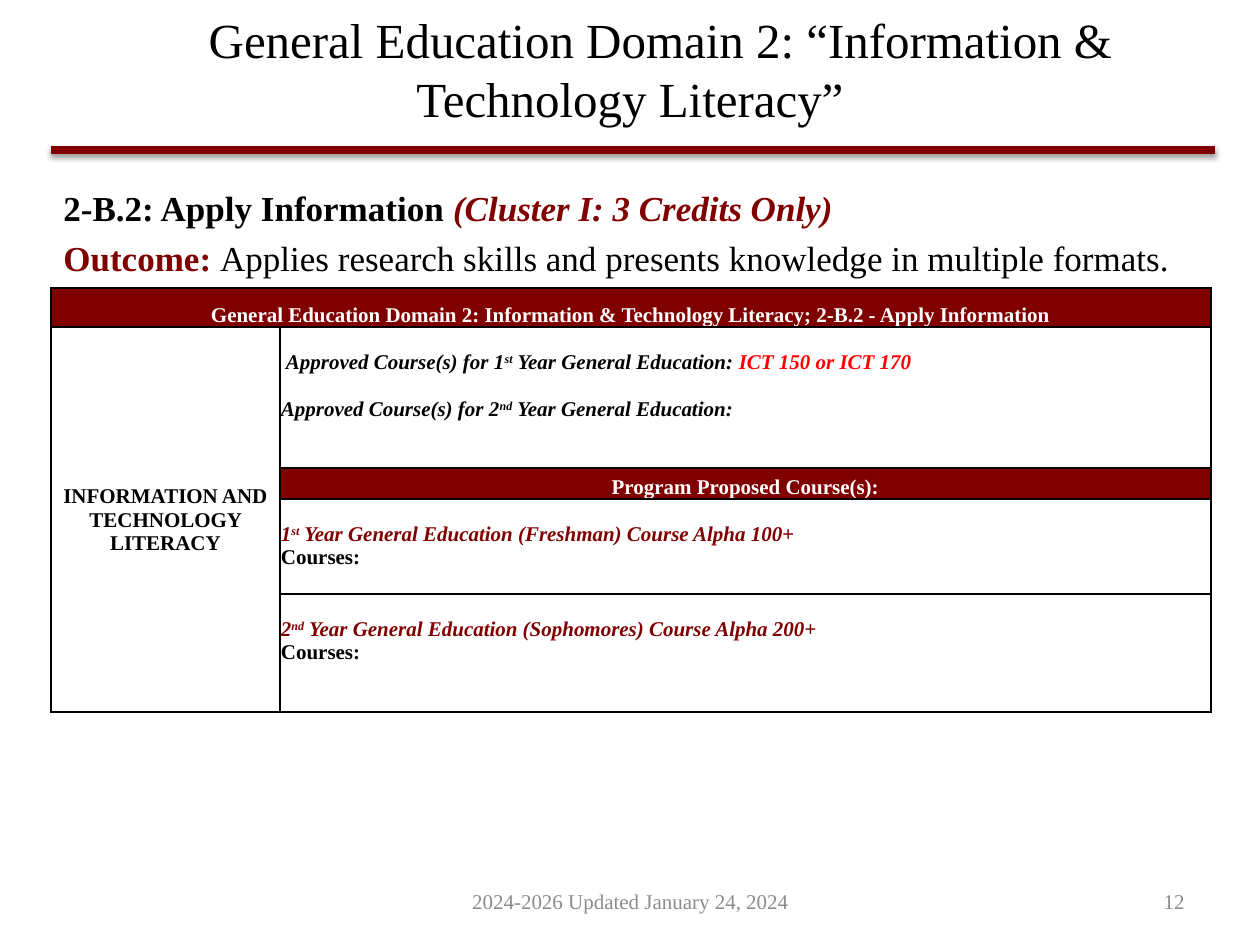
from lxml.etree import SubElement
from pptx import Presentation
from pptx.dml.color import RGBColor
from pptx.enum.shapes import MSO_CONNECTOR
from pptx.enum.text import MSO_ANCHOR, PP_ALIGN
from pptx.oxml.ns import qn
from pptx.util import Emu, Pt

SCALE = 914400 / 126
FONT = "Times New Roman"
MAROON, BLACK, WHITE, GREY, RED = "800000", "000000", "FFFFFF", "8C8C8C", "FF0000"
LABEL = {"bold": True}
NOTE = {"bold": True, "italic": True}


def px(length):
    return Emu(round(length * SCALE))


def color(value):
    return RGBColor.from_string(value)


def apply(target, values):
    for name, value in values.items():
        setattr(target, name, value)


def add_spans(para, spans, size):
    for text, ink, style in spans:
        span = para.add_run()
        span.text = text
        values = dict(style)
        raised = values.pop("raised", False)
        apply(span.font, {"name": FONT, "size": Pt(size), **values})
        span.font.color.rgb = color(ink)
        if raised:
            span.font._element.set("baseline", "30000")


def fill_text(frame, paras, size, align=PP_ALIGN.LEFT, gap=0):
    for index, spans in enumerate(paras):
        para = frame.paragraphs[0] if index == 0 else frame.add_paragraph()
        apply(para, {"alignment": align, "space_before": Pt(gap if index else 0)})
        add_spans(para, spans, size)


def indent(para, name, length):
    para._p.get_or_add_pPr().set(name, str(px(length)))


def add_text(page, box, paras, size, align=PP_ALIGN.LEFT, anchor=MSO_ANCHOR.MIDDLE, gap=0):
    frame = page.shapes.add_textbox(*map(px, box)).text_frame
    apply(frame, {"word_wrap": True, "vertical_anchor": anchor})
    fill_text(frame, paras, size, align, gap)
    return frame


def add_title(page, box):
    title = "General Education Domain 2: “Information & Technology Literacy”"
    frame = add_text(page, box, [[(title, BLACK, {})]], 28, PP_ALIGN.CENTER)
    indent(frame.paragraphs[0], "indent", 61)


def add_rule(page, left, top, width):
    ends = map(px, (left, top, left + width, top))
    rule = page.shapes.add_connector(MSO_CONNECTOR.STRAIGHT, *ends)
    rule.line.color.rgb = color(MAROON)
    rule.line.width = Pt(4.5)
    effects = SubElement(rule._element.spPr, qn("a:effectLst"))
    shadow = SubElement(effects, qn("a:outerShdw"), blurRad="40000", dist="20000",
                        dir="5400000", rotWithShape="0")
    ink = SubElement(shadow, qn("a:srgbClr"), val=BLACK)
    SubElement(ink, qn("a:alpha"), val="38000")


def add_outcome(page, box):
    paras = [
        [("2-B.2: Apply Information ", BLACK, LABEL),
         ("(Cluster I: 3 Credits Only)", MAROON, NOTE)],
        [("Outcome: ", MAROON, LABEL),
         ("Applies research skills and presents knowledge in multiple formats.", BLACK, {})],
    ]
    add_text(page, box, paras, 20, anchor=MSO_ANCHOR.TOP, gap=5)


def ordinal(before, number, suffix, after, ink):
    return [(before + number, ink, NOTE), (suffix, ink, {**NOTE, "raised": True}),
            (after, ink, NOTE)]


def set_borders(cell):
    props = cell._tc.get_or_add_tcPr()
    for index, side in enumerate(("lnL", "lnR", "lnT", "lnB")):
        line = props.makeelement(qn(f"a:{side}"), {"w": "12700"})
        SubElement(SubElement(line, qn("a:solidFill")), qn("a:srgbClr"), val=BLACK)
        props.insert(index, line)


def style_cell(cell, fill, anchor, top):
    apply(cell, {"margin_left": px(1), "margin_right": px(1), "margin_top": px(top),
                 "margin_bottom": 0, "vertical_anchor": anchor})
    cell.fill.solid()
    cell.fill.fore_color.rgb = color(fill)
    set_borders(cell)


def add_course_table(page, left, top, widths, heights):
    size = map(px, (left, top, sum(widths), sum(heights)))
    table = page.shapes.add_table(len(heights), len(widths), *size).table
    for column, width in zip(table.columns, widths):
        column.width = px(width)
    for row, height in zip(table.rows, heights):
        row.height = px(height)

    for row in range(len(heights)):
        for column in range(len(widths)):
            heading = row in (0, 2) and (row == 0 or column == 1)
            fill = MAROON if heading else WHITE
            anchor = MSO_ANCHOR.BOTTOM if heading else MSO_ANCHOR.TOP if column else MSO_ANCHOR.MIDDLE
            style_cell(table.cell(row, column), fill, anchor, 24 if column and not heading else 1)
    table.cell(0, 0).merge(table.cell(0, 1))
    table.cell(1, 0).merge(table.cell(4, 0))

    centered = {
        (0, 0): ("General Education Domain 2: Information & Technology Literacy; "
                 "2-B.2 - Apply Information", WHITE),
        (1, 0): ("INFORMATION AND TECHNOLOGY LITERACY", BLACK),
        (2, 1): ("Program Proposed Course(s):", WHITE),
    }
    for place, (text, ink) in centered.items():
        fill_text(table.cell(*place).text_frame, [[(text, ink, LABEL)]], 12, PP_ALIGN.CENTER)

    approved = [ordinal("Approved Course(s) for ", number, suffix,
                        " Year General Education:" + end, BLACK)
                for number, suffix, end in (("1", "st", " "), ("2", "nd", ""))]
    approved[0].append(("ICT 150 or ICT 170", RED, NOTE))
    frame = table.cell(1, 1).text_frame
    fill_text(frame, approved, 12, gap=13.4)
    indent(frame.paragraphs[0], "marL", 5)

    proposed = (("1", "st", "Freshman", "100+"), ("2", "nd", "Sophomores", "200+"))
    for row, (number, suffix, group, level) in enumerate(proposed, 3):
        after = f" Year General Education ({group}) Course Alpha {level}"
        paras = [ordinal("", number, suffix, after, MAROON), [("Courses:", BLACK, LABEL)]]
        fill_text(table.cell(row, 1).text_frame, paras, 12)


def add_footer(page, top, height):
    add_text(page, (431, top, 399, height),
             [[("2024-2026 Updated January 24, 2024", GREY, {})]], 12, PP_ALIGN.CENTER)
    add_text(page, (903, top, 294, height), [[("12", GREY, {})]], 12, PP_ALIGN.RIGHT)


def main():
    deck = Presentation()
    apply(deck, {"slide_width": px(1260), "slide_height": px(945)})
    page = deck.slides.add_slide(deck.slide_layouts[6])
    add_title(page, (63, 8, 1134, 121))
    add_rule(page, 51, 150, 1164)
    add_outcome(page, (51, 180, 1160, 102))
    add_course_table(page, 51, 288, (229, 931), (39, 141, 31, 95, 118))
    add_footer(page, 876, 50)
    deck.save("out.pptx")


if __name__ == "__main__":
    main()
